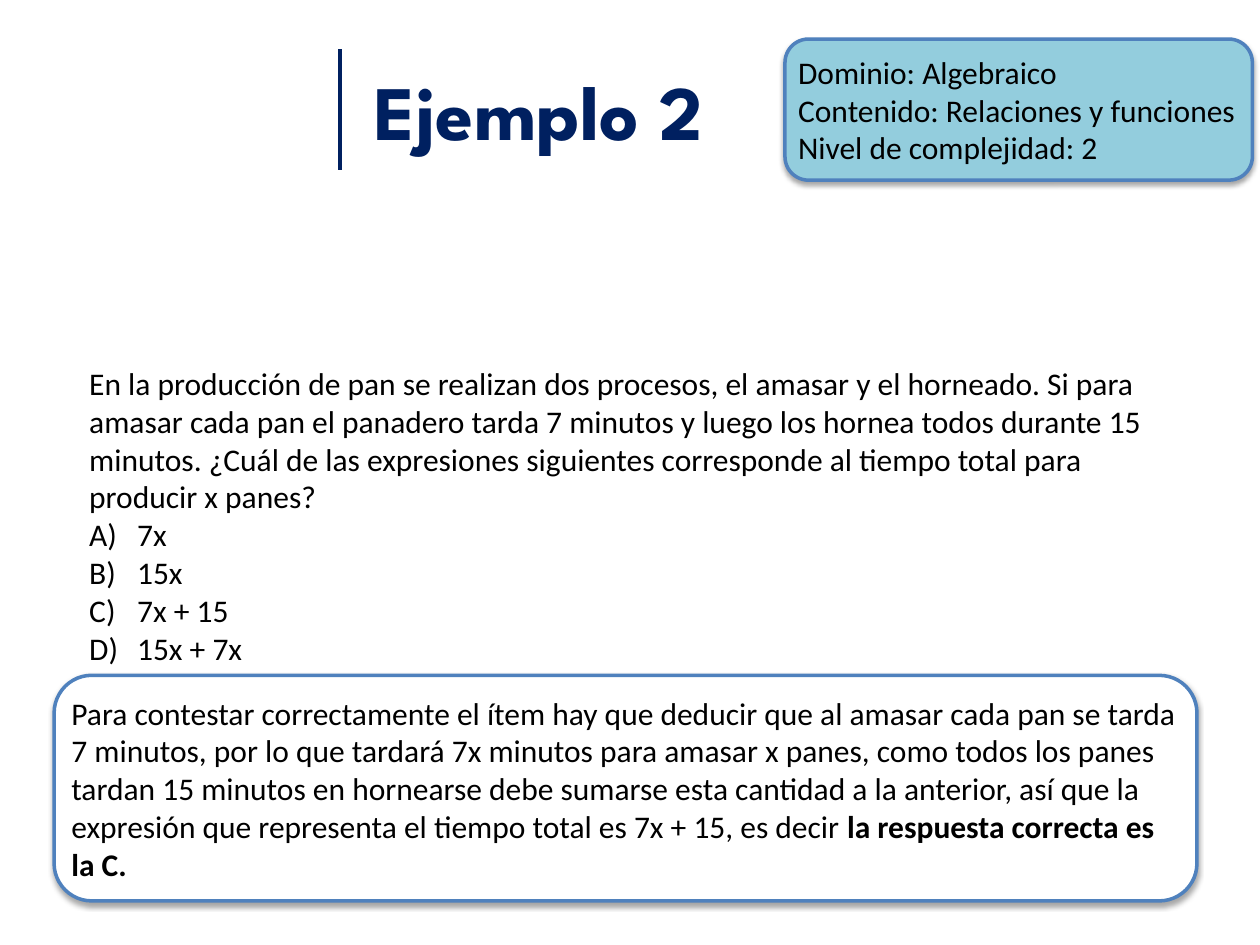
from lxml import etree
from pptx import Presentation
from pptx.dml.color import RGBColor
from pptx.enum.shapes import MSO_CONNECTOR, MSO_SHAPE
from pptx.enum.text import MSO_ANCHOR, PP_ALIGN
from pptx.oxml import parse_xml
from pptx.oxml.ns import nsdecls, qn
from pptx.util import Inches, Pt

COLORS = {"navy": "002060", "blue": "4F81BD", "aqua": "93CDDD", "white": "FFFFFF", "black": "000000"}
RGB = {name: RGBColor.from_string(value) for name, value in COLORS.items()}

prs = Presentation()
prs.slide_width, prs.slide_height = Inches(10), Inches(7.5)
COL, ROW = prs.slide_width / 100, prs.slide_height / 75
s = prs.slides.add_slide(prs.slide_layouts[6])


def grid(left, top, width, height):
    return [int(n * unit) for n, unit in zip((left, top, width, height), (COL, ROW, COL, ROW))]


def write(sp, paragraphs, inset, anchor, size=18, font="Calibri", color="black"):
    tf = sp.text_frame
    frame = {"word_wrap": True, "vertical_anchor": anchor, "margin_left": inset, "margin_right": inset,
             "margin_top": Inches(0.05), "margin_bottom": Inches(0.05)}
    for name, value in frame.items():
        setattr(tf, name, value)
    for i, runs in enumerate(paragraphs):
        p = tf.paragraphs[0] if i == 0 else tf.add_paragraph()
        p.alignment = PP_ALIGN.LEFT
        for text, bold in runs:
            r = p.add_run()
            r.text = text
            for name, value in {"size": Pt(size), "name": font, "bold": bold}.items():
                setattr(r.font, name, value)
            r.font.color.rgb = RGB[color]
    return tf


rule = s.shapes.add_connector(MSO_CONNECTOR.STRAIGHT, *grid(27, 3.9, 27, 13.5))
rule.line.color.rgb = RGB["navy"]
rule.line.width = Pt(2)
etree.SubElement(rule._element.spPr, qn("a:effectLst"))

title = s.shapes.add_textbox(*grid(29.2, 3.9, 65.8, 9.6))
write(title, [[("Ejemplo 2", True)]], Inches(0.05), MSO_ANCHOR.MIDDLE, 44, "League Spartan", "navy")

classification = [
    [("Dominio: Algebraico", False)],
    [("Contenido: Relaciones y funciones", False)],
    [("Nivel de complejidad: 2", False)],
]
explanation = [[
    ("Para contestar correctamente el ítem hay que deducir que al amasar cada pan se tarda 7 minutos, "
     "por lo que tardará 7x minutos para amasar x panes, como todos los panes tardan 15 minutos en "
     "hornearse debe sumarse esta cantidad a la anterior, así que la expresión que representa el "
     "tiempo total es 7x + 15, es decir ", False),
    ("la respuesta correcta es la C.", True),
]]
for box, fill, paragraphs in (
    ((62.3, 3.1, 37.1, 11.2), "aqua", classification),
    ((4.3, 53.6, 90.7, 17.9), "white", explanation),
):
    sp = s.shapes.add_shape(MSO_SHAPE.ROUNDED_RECTANGLE, *grid(*box))
    sp.fill.solid()
    sp.fill.fore_color.rgb = RGB[fill]
    sp.line.color.rgb = RGB["blue"]
    sp.line.width = Pt(2)
    sp._element.spPr.append(parse_xml(
        f'<a:effectLst {nsdecls("a")}><a:outerShdw blurRad="{Pt(3)}" dist="{Pt(1.8)}" dir="5400000" '
        f'rotWithShape="0"><a:srgbClr val="{COLORS["black"]}"><a:alpha val="35000"/></a:srgbClr>'
        '</a:outerShdw></a:effectLst>'))
    write(sp, paragraphs, Inches(0.05), MSO_ANCHOR.MIDDLE)

question = (
    "En la producción de pan se realizan dos procesos, el amasar y el horneado. Si para amasar cada pan "
    "el panadero tarda 7 minutos y luego los hornea todos durante 15 minutos. ¿Cuál de las expresiones "
    "siguientes corresponde al tiempo total para producir x panes?"
)
options = ["7x", "15x", "7x + 15", "15x + 7x"]
sp = s.shapes.add_textbox(*grid(6.1, 28.4, 87.8, 25.2))
tf = write(sp, [[(text, False)] for text in [question] + options], Inches(0.1), MSO_ANCHOR.TOP)
for p in tf.paragraphs[1:]:
    pPr = p._p.get_or_add_pPr()
    pPr.set("marL", str(Inches(0.38)))
    pPr.set("indent", str(-Inches(0.38)))
    etree.SubElement(pPr, qn("a:buFont")).set("typeface", "+mj-lt")
    etree.SubElement(pPr, qn("a:buAutoNum")).set("type", "alphaUcParenR")

prs.save("out.pptx")
